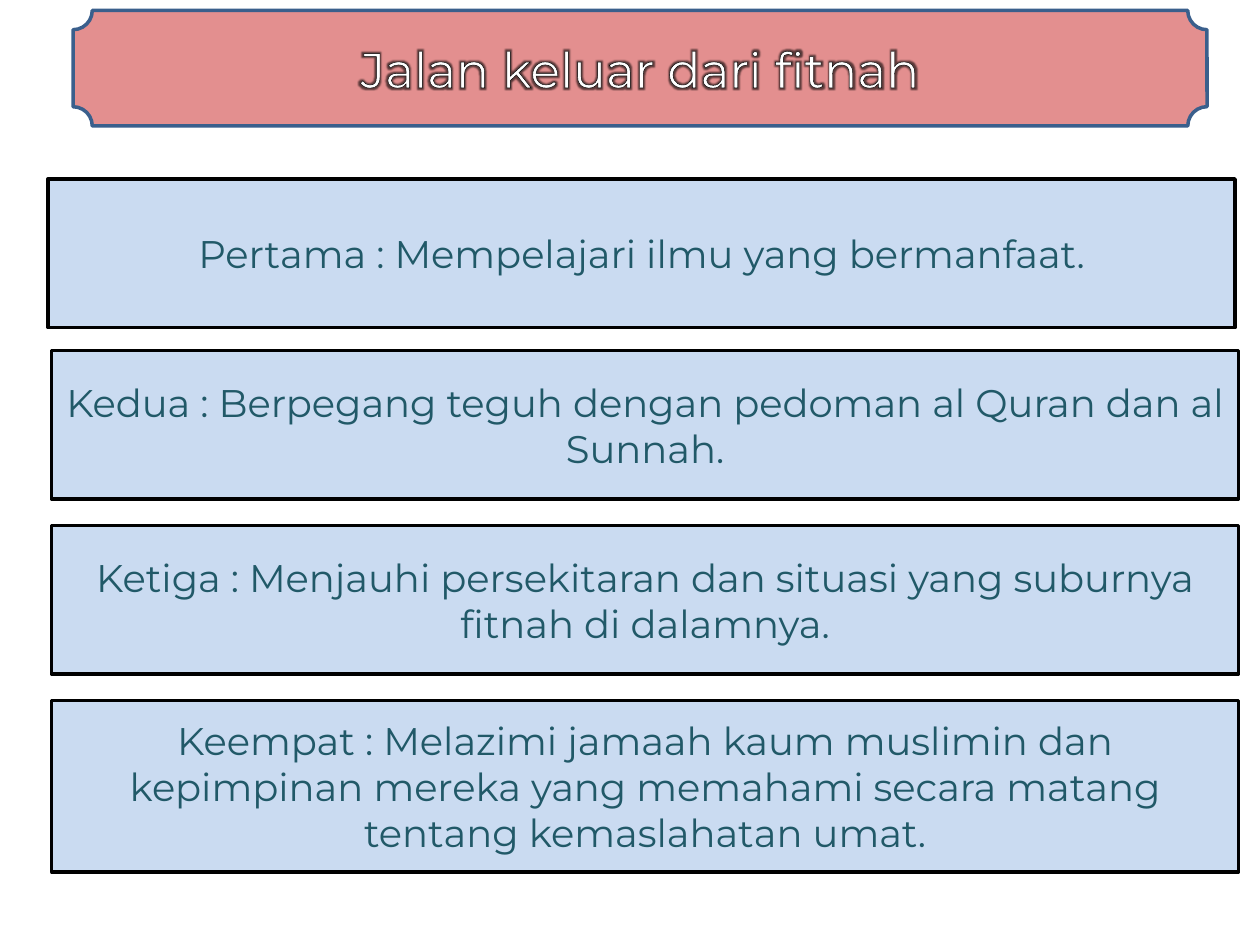
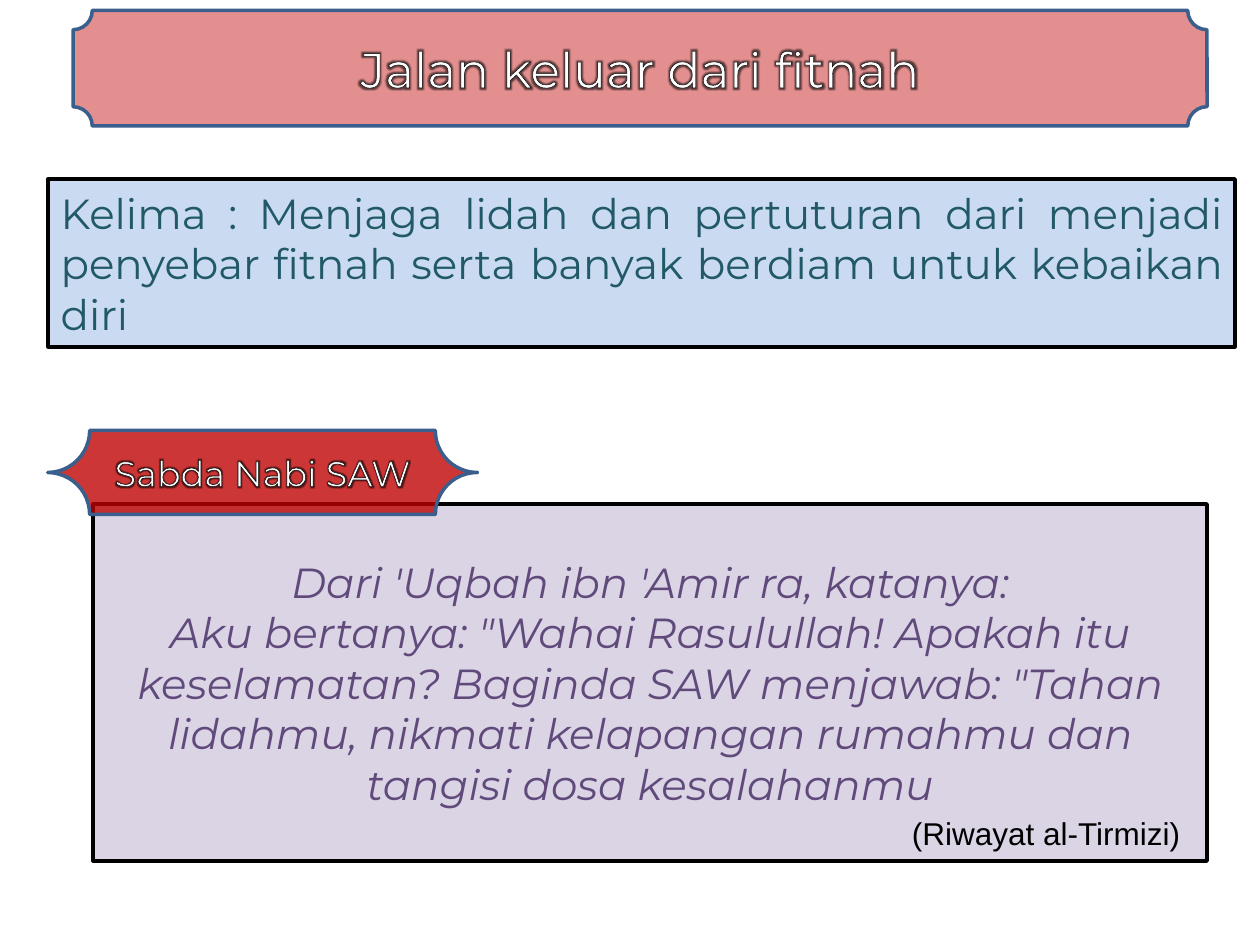
import pptx
import pptx.util
import pptx.oxml
import pptx.dml.color
import pptx.enum.shapes
import pptx.enum.text

Pt = pptx.util.Pt
RGBColor = pptx.dml.color.RGBColor
MSO_SHAPE = pptx.enum.shapes.MSO_SHAPE
PP_ALIGN = pptx.enum.text.PP_ALIGN
MSO_ANCHOR = pptx.enum.text.MSO_ANCHOR
MSO_AUTO_SIZE = pptx.enum.text.MSO_AUTO_SIZE

RED = RGBColor(0xC0, 0x00, 0x00)
PALE_BLUE = RGBColor(0xC6, 0xD9, 0xF1)
LILAC = RGBColor(0xCC, 0xC1, 0xDA)
BORDER_BLUE = RGBColor(0x3A, 0x5F, 0x8C)
TEAL = RGBColor(0x21, 0x59, 0x68)
PURPLE = RGBColor(0x60, 0x4A, 0x7B)
WHITE = RGBColor(0xFF, 0xFF, 0xFF)
BLACK = RGBColor(0x00, 0x00, 0x00)

FONT = "Montserrat"
TITLE = "Jalan keluar dari fitnah"
TITLE_BOX = (41.75, 6, 648, 66)
BOX_WIDTH = 678.25
FIRST_LEFT, FIRST_TOP = 27.5, 102.25
NEXT_LEFT, NEXT_TOP, STEP = 29.5, 200.25, 100

A_NS = 'xmlns:a="http://schemas.openxmlformats.org/drawingml/2006/main"'
OUTLINE = f'<a:ln {A_NS} w="9525"><a:solidFill><a:srgbClr val="000000"/></a:solidFill></a:ln>'
GLOW = (f'<a:effectLst {A_NS}><a:glow rad="45500"><a:srgbClr val="000000">'
        '<a:alpha val="60000"/></a:srgbClr></a:glow></a:effectLst>')


def place(sp, box):
    sp.left, sp.top, sp.width, sp.height = (Pt(v) for v in box)


def add_panel(s, kind, box, color, opacity, border):
    sp = s.shapes.add_shape(kind, *(Pt(v) for v in box))
    sp.shadow.inherit = False
    sp.fill.solid()
    sp.fill.fore_color.rgb = color
    clr = sp.fill._xPr.solidFill[0]
    clr.append(pptx.oxml.parse_xml(f'<a:alpha {A_NS} val="{opacity * 1000}"/>'))
    sp.line.color.rgb = border
    sp.line.width = Pt(2)
    return sp


def write(sp, text, size, color, align=PP_ALIGN.CENTER, font=FONT, italic=False):
    tf = sp.text_frame
    tf.text = text
    tf.vertical_anchor = MSO_ANCHOR.MIDDLE
    for p in tf.paragraphs:
        p.alignment = align
        for r in p.runs:
            r.font.size = Pt(size)
            r.font.name = font
            r.font.italic = italic
            r.font.color.rgb = color


def write_glowing(sp, text, size):
    write(sp, text, size, WHITE)
    for r in sp.text_frame.paragraphs[0].runs:
        rPr = r.font._rPr
        rPr.insert(0, pptx.oxml.parse_xml(OUTLINE))
        rPr[1].addnext(pptx.oxml.parse_xml(GLOW))


def add_titled_slide(prs):
    s = prs.slides.add_slide(prs.slide_layouts[5])
    plaque = add_panel(s, MSO_SHAPE.PLAQUE, TITLE_BOX, RED, 44, BORDER_BLUE)
    title = s.shapes.title
    title._element.addprevious(plaque._element)
    place(title, TITLE_BOX)
    write_glowing(title, TITLE, 28)
    title.text_frame.auto_size = MSO_AUTO_SIZE.NONE
    return s


def add_advice(s, left, top, height, text, size=22, align=PP_ALIGN.CENTER):
    box = (left, top, BOX_WIDTH, height)
    sp = add_panel(s, MSO_SHAPE.RECTANGLE, box, PALE_BLUE, 93, BLACK)
    write(sp, text, size, TEAL, align)


def add_hadith(s):
    sp = add_panel(s, MSO_SHAPE.RECTANGLE, (53.25, 288, 636.5, 204), LILAC, 69, BLACK)
    write(sp, "Dari 'Uqbah ibn 'Amir ra, katanya:\n"
          'Aku bertanya: "Wahai Rasulullah! Apakah itu keselamatan? '
          'Baginda SAW menjawab: "Tahan lidahmu, nikmati kelapangan '
          "rumahmu dan tangisi dosa kesalahanmu", 24, PURPLE, italic=True)

    label = add_panel(s, MSO_SHAPE.PLAQUE, (27.25, 246, 245.5, 48), RED, 79, BORDER_BLUE)
    label.adjustments[0] = 0.5
    write_glowing(label, "Sabda Nabi SAW", 20)

    source = s.shapes.add_textbox(Pt(514), Pt(461.5), Pt(168), Pt(29))
    write(source, "(Riwayat al-Tirmizi)", 18, BLACK, PP_ALIGN.LEFT, "Arial")
    source.text_frame.word_wrap = False


def main():
    prs = pptx.Presentation()
    prs.slide_width, prs.slide_height = Pt(720), Pt(540)

    s = add_titled_slide(prs)
    add_advice(s, FIRST_LEFT, FIRST_TOP, 85, "Pertama : Mempelajari ilmu yang bermanfaat.")
    following = [
        ("Kedua : Berpegang teguh dengan pedoman al Quran dan al Sunnah.", 85),
        ("Ketiga : Menjauhi persekitaran dan situasi yang suburnya fitnah di dalamnya.", 85),
        ("Keempat : Melazimi jamaah kaum muslimin dan kepimpinan mereka yang "
         "memahami secara matang tentang kemaslahatan umat.", 98),
    ]
    for i, (text, height) in enumerate(following):
        add_advice(s, NEXT_LEFT, NEXT_TOP + i * STEP, height, text)

    s = add_titled_slide(prs)
    add_advice(s, FIRST_LEFT, FIRST_TOP, 96,
               "Kelima : Menjaga lidah dan pertuturan dari menjadi penyebar "
               "fitnah serta banyak berdiam untuk kebaikan diri", 24, PP_ALIGN.JUSTIFY)
    add_hadith(s)

    prs.save("out.pptx")


if __name__ == "__main__":
    main()
